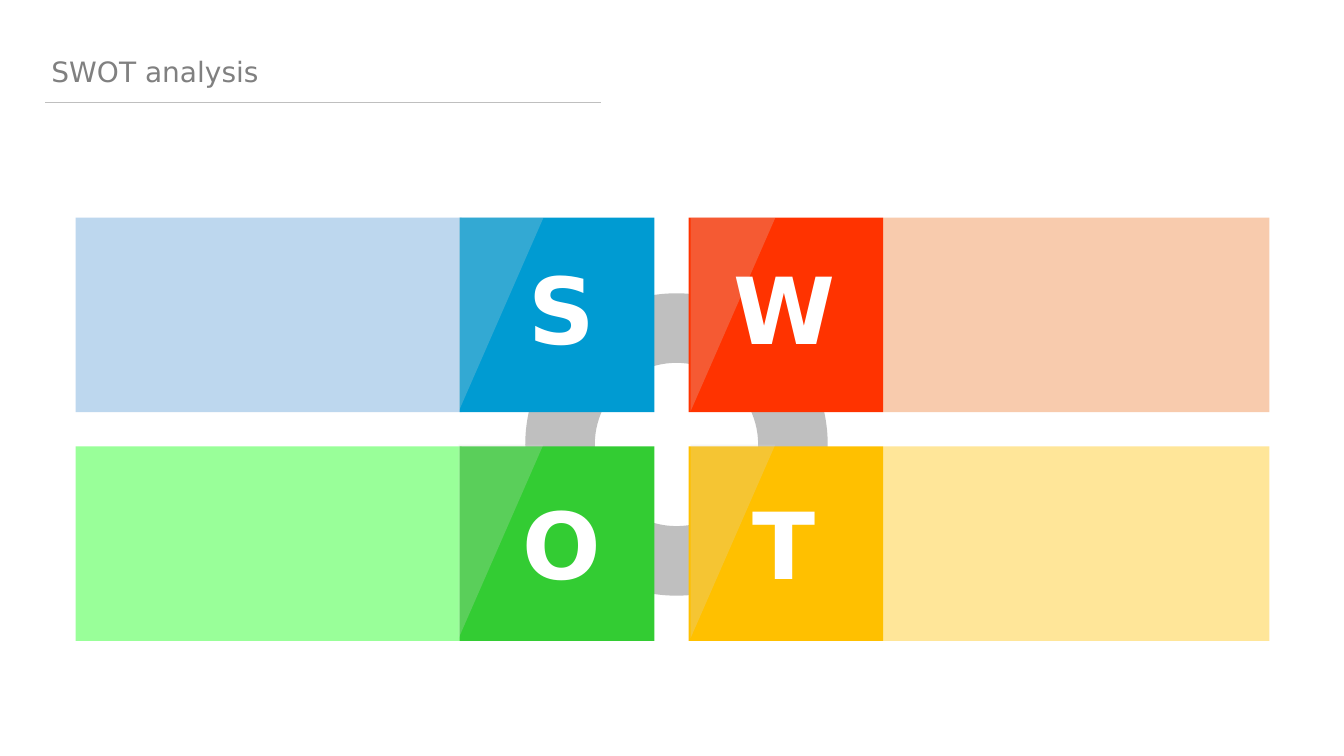
from collections import namedtuple
from dataclasses import dataclass

from lxml import etree
from pptx import Presentation, util as u
from pptx.dml.color import RGBColor
from pptx.enum import shapes, text
from pptx.oxml.ns import qn

Box = namedtuple("Box", "left top width height")
Quadrant = namedtuple("Quadrant", "letter tile_color panel_color column row")


@dataclass(frozen=True)
class Theme:
    """Colours, font and type sizes of the deck."""
    font: str = "DejaVu Sans"
    title_size: int = 20
    letter_size: int = 66
    title: str = "808080"
    gray: str = "BFBFBF"
    sheen: str = "D9D9D9"
    sheen_alpha: int = 24
    letter: str = "FFFFFF"


THEME = Theme()
TILE = 1.93
PANEL = 3.83
SHEEN = 0.84
ROW_TOPS = (2.16, 4.43)
SHEEN_TOPS = (2.16, 4.41)
LETTER_TOPS = (2.45, 4.78)
TILE_LEFTS = (4.56, 6.83)
PANEL_LEFTS = (0.75, 8.76)
SHEEN_LEFTS = (4.55, 6.85)
LETTER_LEFTS = (4.92, 7.13)

QUADRANTS = (
    Quadrant("S", "009BD2", "BDD7EE", 0, 0),
    Quadrant("W", "FF3300", "F8CBAD", 1, 0),
    Quadrant("T", "FFC000", "FFE699", 1, 1),
    Quadrant("O", "33CC33", "99FF99", 0, 1),
)


def inches(box):
    """Convert a box to lengths."""
    return [u.Inches(value) for value in box]


def paint(shape, color):
    """Give a shape a plain fill without outline or shadow."""
    shape.shadow.inherit = False
    shape.fill.solid()
    shape.fill.fore_color.rgb = RGBColor.from_string(color)
    shape.line.fill.background()


def style(paragraph, size, color, bold, align):
    """Set the font and alignment of a paragraph."""
    paragraph.alignment = align
    font = paragraph.font
    font.name, font.size, font.bold = THEME.font, u.Pt(size), bold
    font.color.rgb = RGBColor.from_string(color)


def add_block(group, kind, box, color):
    """Add a filled preset shape."""
    shape = group.shapes.add_shape(kind, *inches(box))
    paint(shape, color)
    return shape


def add_sheen(group, box):
    """Add a translucent triangle in the top left half of the box."""
    left, top, width, height = inches(box)
    builder = group.shapes.build_freeform(left, top)
    builder.add_line_segments([(left + width, top), (left, top + height)], close=True)
    sheen = builder.convert_to_shape()
    paint(sheen, THEME.sheen)
    color = sheen.fill._xPr.find(qn("a:solidFill"))[0]
    etree.SubElement(color, qn("a:alpha"), val=str(THEME.sheen_alpha * 1000))


def add_letter(group, box, letter):
    """Add a large white letter centred in the box."""
    frame = group.shapes.add_textbox(*inches(box)).text_frame
    frame.word_wrap = True
    paragraph = frame.paragraphs[0]
    paragraph.text = letter
    style(paragraph, THEME.letter_size, THEME.letter, True, text.PP_ALIGN.CENTER)


def add_quadrant(group, quadrant):
    """Add a panel and its lettered tile."""
    column, row = quadrant.column, quadrant.row
    rectangle = shapes.MSO_SHAPE.RECTANGLE
    top = ROW_TOPS[row]
    add_block(group, rectangle, Box(PANEL_LEFTS[column], top, PANEL, TILE),
              quadrant.panel_color)
    add_block(group, rectangle, Box(TILE_LEFTS[column], top, TILE, TILE),
              quadrant.tile_color)
    add_sheen(group, Box(SHEEN_LEFTS[column], SHEEN_TOPS[row], SHEEN, 1.92))
    add_letter(group, Box(LETTER_LEFTS[column], LETTER_TOPS[row], 1.3, 1.21),
               quadrant.letter)


def add_matrix(page, ring_box):
    """Add the ring and the four quadrants over it."""
    group = page.shapes.add_group_shape()
    ring = add_block(group, shapes.MSO_SHAPE.DONUT, ring_box, THEME.gray)
    ring.adjustments[0] = 0.23
    for quadrant in QUADRANTS:
        add_quadrant(group, quadrant)


def add_heading(page, box, wording):
    """Place the title in the box with a thin rule below it."""
    title = page.shapes.title
    title.left, title.top, title.width, title.height = inches(box)
    frame = title.text_frame
    frame.text = wording
    frame.vertical_anchor = text.MSO_ANCHOR.TOP
    frame.auto_size = text.MSO_AUTO_SIZE.NONE
    style(frame.paragraphs[0], THEME.title_size, THEME.title, False, text.PP_ALIGN.LEFT)
    rule_top = u.Inches(box.top + box.height + 0.09)
    rule = page.shapes.add_connector(
        shapes.MSO_CONNECTOR.STRAIGHT, u.Inches(box.left + 0.04), rule_top,
        u.Inches(box.left + box.width - 0.04), rule_top)
    rule.line.color.rgb = RGBColor.from_string(THEME.gray)
    rule.line.width = u.Pt(0.5)
    etree.SubElement(rule._element.spPr, qn("a:effectLst"))


def main():
    """Build and save the deck."""
    deck = Presentation()
    deck.slide_width, deck.slide_height = u.Inches(13.33), u.Inches(7.5)
    page = deck.slides.add_slide(deck.slide_layouts.get_by_name("Title Only"))
    add_matrix(page, Box(5.21, 2.91, 3, 3))
    add_heading(page, Box(0.41, 0.49, 5.59, 0.44), "SWOT analysis")
    deck.save("out.pptx")


if __name__ == "__main__":
    main()
